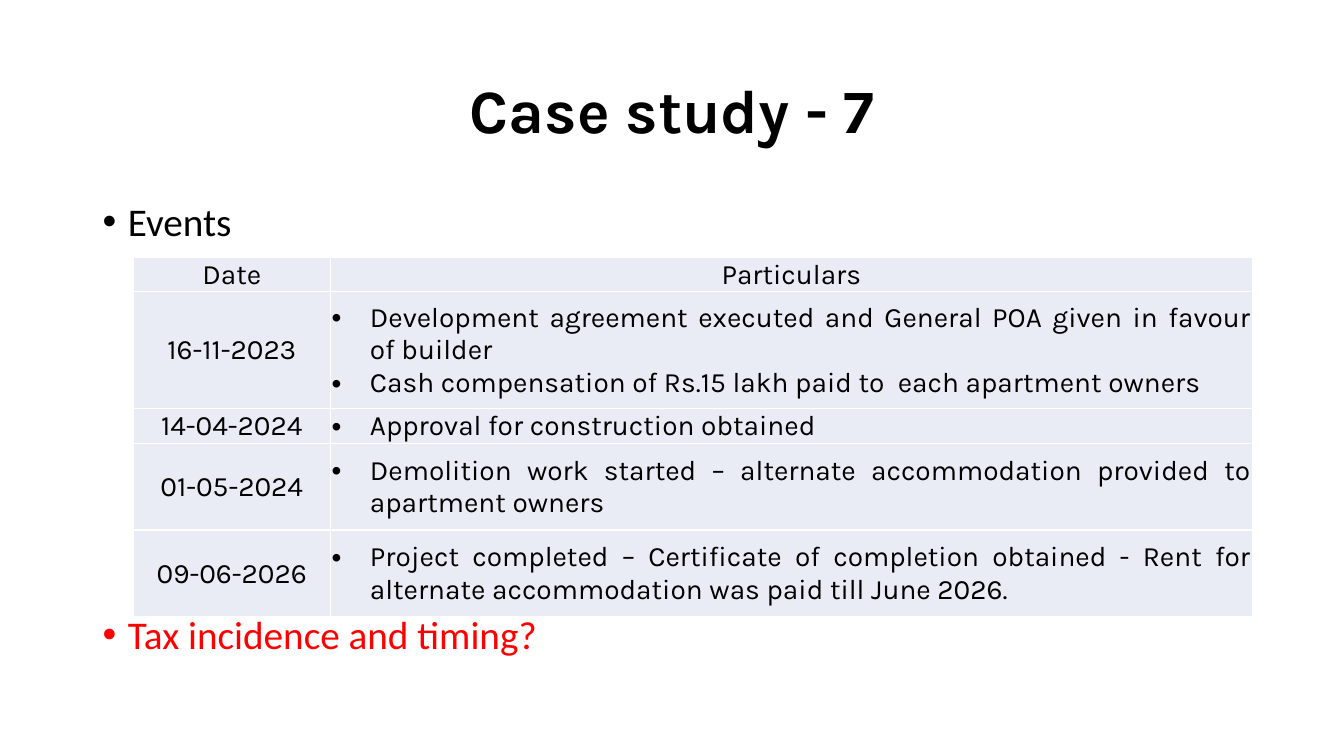
"""Build a case study slide with a dated table of events."""
from dataclasses import dataclass

from lxml import etree
from pptx import Presentation
from pptx import util as u
from pptx.dml.color import RGBColor
from pptx.enum import text
from pptx.oxml import parse_xml
from pptx.oxml.ns import nsdecls, qn

WIDE, HIGH = 13.33, 7.5
HUES = {"ink": "000000", "alert": "FF0000", "cell": "E9EBF5", "rule": "FFFFFF"}
ALIGN = text.PP_ALIGN
MID = text.MSO_ANCHOR.MIDDLE


@dataclass(frozen=True)
class Area:
    """A box in percent of the slide's width and height."""
    left: float
    top: float
    width: float
    height: float


@dataclass(frozen=True)
class Style:
    """The look of a paragraph; indent is in inches."""
    font: str
    size: int
    hue: str = "ink"
    bold: bool = False
    align: ALIGN = ALIGN.LEFT
    indent: float = 0
    lines: float = 1
    before: int = 0


@dataclass(frozen=True)
class Event:
    """One table row; height is in percent of the slide."""
    date: str
    points: tuple[str, ...]
    height: float


TITLE = Area(6.9, 5.33, 86.27, 19.33)
BODY = Area(6.9, 26.67, 86.27, 63.47)
TABLE = Area(9.9, 34, 83.27, 47.47)
COLUMNS = (14.7, 68.57)
HEAD = Style("Karla", 44, bold=True, align=ALIGN.CENTER, lines=0.9)
TOPIC = Style("Calibri", 28, indent=0.25, lines=0.8, before=10)
ASK = Style("Calibri", 28, "alert", indent=0.25, lines=0.8, before=268)
LABEL = Style("Karla", 20, align=ALIGN.CENTER)
POINT = Style("Karla", 20, align=ALIGN.JUSTIFY, indent=0.38)
EVENTS = (
    Event("Date", ("Particulars",), 3.87),
    Event("16-11-2023", (
        "Development agreement executed and General POA given in favour of builder",
        "Cash compensation of Rs.15 lakh paid to  each apartment owners"), 15.47),
    Event("14-04-2024", ("Approval for construction obtained",), 3.87),
    Event("01-05-2024", (
        "Demolition work started – alternate accommodation provided to apartment owners",),
        11.47),
    Event("09-06-2026", (
        "Project completed – Certificate of completion obtained - Rent for alternate "
        "accommodation was paid till June 2026.",), 11.47),
)


def across(share: float) -> int:
    """Turn a percentage of the width into a length."""
    return u.Inches(WIDE * share / 100)


def down(share: float) -> int:
    """Turn a percentage of the height into a length."""
    return u.Inches(HIGH * share / 100)


def place(area: Area) -> tuple[int, int, int, int]:
    """Give the left, top, width and height of an area."""
    return across(area.left), down(area.top), across(area.width), down(area.height)


def bullet(para, indent: float) -> None:
    """Hang a round bullet in front of a paragraph."""
    props = para._p.get_or_add_pPr()
    props.set("marL", str(u.Inches(indent)))
    props.set("indent", str(u.Inches(-indent)))
    etree.SubElement(props, qn("a:buFont"), typeface="Arial")
    etree.SubElement(props, qn("a:buChar"), char="•")


def write(frame, lines: tuple[str, ...], styles: tuple[Style, ...]) -> None:
    """Fill a text frame with one styled paragraph per line."""
    frame.text = "\n".join(lines)
    frame.word_wrap = True
    for para, style in zip(frame.paragraphs, styles):
        para.alignment = style.align
        para.line_spacing = style.lines
        para.space_before = u.Pt(style.before)
        if style.indent:
            bullet(para, style.indent)
        for run in para.runs:
            run.font.name = style.font
            run.font.size = u.Pt(style.size)
            run.font.bold = style.bold
            run.font.color.rgb = RGBColor.from_string(HUES[style.hue])


def paint(cell) -> None:
    """Give a table cell its fill, margins and borders."""
    cell.fill.solid()
    cell.fill.fore_color.rgb = RGBColor.from_string(HUES["cell"])
    cell.vertical_anchor = MID
    cell.margin_left = cell.margin_right = cell.margin_top = u.Inches(0.01)
    cell.margin_bottom = 0
    props = cell._tc.get_or_add_tcPr()
    for spot, side in enumerate("LRTB"):
        props.insert(spot, parse_xml(
            f'<a:ln{side} {nsdecls("a")} w="{u.Pt(1)}"><a:solidFill>'
            f'<a:srgbClr val="{HUES["rule"]}"/></a:solidFill></a:ln{side}>'))


def chart_events(slide) -> None:
    """Add the table of events."""
    table = slide.shapes.add_table(len(EVENTS), len(COLUMNS), *place(TABLE)).table
    table.first_row = table.horz_banding = False
    for column, share in zip(table.columns, COLUMNS):
        column.width = across(share)
    for index, (row, event) in enumerate(zip(table.rows, EVENTS)):
        row.height = down(event.height)
        look = POINT if index else LABEL
        date, facts = row.cells
        write(date.text_frame, (event.date,), (LABEL,))
        write(facts.text_frame, event.points, (look,) * len(event.points))
        paint(date)
        paint(facts)


def main() -> None:
    """Build and save the slide."""
    deck = Presentation()
    deck.slide_width, deck.slide_height = u.Inches(WIDE), u.Inches(HIGH)
    slide = deck.slides.add_slide(deck.slide_layouts[6])
    title = slide.shapes.add_textbox(*place(TITLE)).text_frame
    write(title, ("Case study - 7",), (HEAD,))
    title.vertical_anchor = MID
    body = slide.shapes.add_textbox(*place(BODY)).text_frame
    write(body, ("Events", "Tax incidence and timing?"), (TOPIC, ASK))
    chart_events(slide)
    deck.save("out.pptx")


if __name__ == "__main__":
    main()
